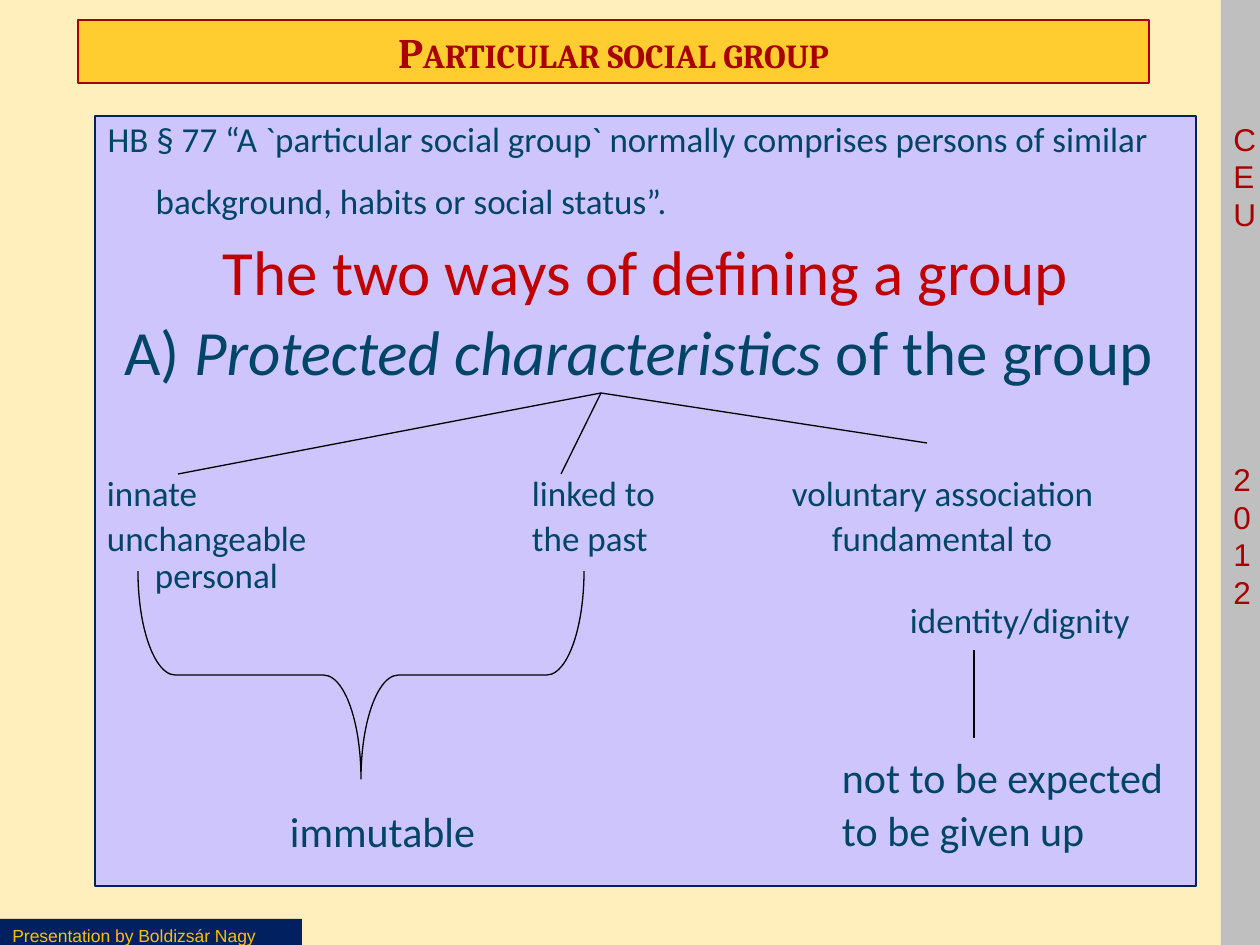
from dataclasses import dataclass
from typing import Any, NamedTuple, Optional

from lxml import etree
from pptx import Presentation
from pptx.dml.color import RGBColor
from pptx.enum.shapes import MSO_CONNECTOR, MSO_SHAPE
from pptx.enum.text import MSO_ANCHOR, MSO_AUTO_SIZE, PP_ALIGN
from pptx.oxml.ns import qn
from pptx.util import Emu, Pt

RECT, BRACE = MSO_SHAPE.RECTANGLE, MSO_SHAPE.LEFT_BRACE
STRAIGHT = MSO_CONNECTOR.STRAIGHT
LEFT, CENTER = PP_ALIGN.LEFT, PP_ALIGN.CENTER
TOP, MIDDLE = MSO_ANCHOR.TOP, MSO_ANCHOR.MIDDLE
NO_FIT = MSO_AUTO_SIZE.NONE
NO_MARGINS = dict.fromkeys(("margin_left", "margin_top", "margin_right", "margin_bottom"), 0)


@dataclass(frozen=True)
class Theme:
    page: str = "FFEFBD"
    band: str = "BFBFBF"
    navy: str = "002060"
    gold: str = "FFCD2F"
    amber: str = "FFC000"
    lilac: str = "CDC5FB"
    maroon: str = "A80000"
    red: str = "C00000"
    teal: str = "004568"
    ink: str = "000000"
    head: str = "Cambria"
    body: str = "Calibri"
    side: str = "Arial"
    footer: int = 10
    band_text: int = 18
    small: int = 20
    medium: int = 24
    large: int = 36
    hairline: float = 0.75


class Box(NamedTuple):
    x: int
    y: int
    w: int
    h: int


class Span(NamedTuple):
    text: str
    size: int
    color: str
    italic: bool = False


class Para(NamedTuple):
    spans: tuple[Span, ...]
    before: float = 0
    align: Any = LEFT
    margin: int = 0
    hang: int = 0


class Label(NamedTuple):
    box: Box
    paras: tuple[Para, ...]


class Line(NamedTuple):
    x1: int
    y1: int
    x2: int
    y2: int


T = Theme()
HANG = 48


def px(n: int) -> Emu:
    return Emu(n * 914400 // 126)


def rgb(code: str) -> RGBColor:
    return RGBColor.from_string(code)


def assign(obj: Any, values: dict[str, Any]) -> None:
    for name, value in values.items():
        setattr(obj, name, value)


def plain(text: str, before: float = 0, margin: int = 0, hang: int = 0,
          size: int = T.small) -> Para:
    return Para((Span(text, size, T.teal),), before, LEFT, margin, hang)


BODY = (
    Para((Span("HB § 77 “A `particular social group` normally comprises persons of similar "
               "background, habits or social status”.", T.small, T.teal),
          Span(" ", T.large, T.teal)), 0, LEFT, HANG, HANG),
    Para((Span("The two ways of defining a group", T.large, T.red),), 7.2, CENTER, HANG, HANG),
    Para((Span("A) ", T.large, T.teal),
          Span("Protected characteristics", T.large, T.teal, True),
          Span(" of the group ", T.large, T.teal)), 7.2, CENTER, HANG, HANG),
)

LABELS = (
    Label(Box(107, 476, 300, 122),
          (plain("innate"), plain("unchangeable\npersonal", 4, HANG, HANG))),
    Label(Box(532, 476, 200, 84), (plain("linked to"), plain("the past", 4))),
    Label(Box(792, 476, 391, 167),
          (plain("voluntary association"), plain("fundamental to", 4, 40),
           plain("identity/dignity", 25.7, 118))),
    Label(Box(290, 811, 260, 46), (plain("immutable", size=T.medium),)),
    Label(Box(842, 757, 341, 100),
          (plain("not to be expected", size=T.medium),
           plain("to be given up", 4.8, size=T.medium))),
)

LINES = (
    Line(601, 393, 178, 474),
    Line(601, 393, 561, 474),
    Line(601, 393, 927, 443),
    Line(974, 650, 974, 738),
)


def paint(sp: Any, fill: Optional[str], line: Optional[str]) -> None:
    if fill:
        sp.fill.solid()
        sp.fill.fore_color.rgb = rgb(fill)
    else:
        sp.fill.background()
    if line:
        sp.line.color.rgb = rgb(line)
        sp.line.width = Pt(T.hairline)
    else:
        sp.line.fill.background()


def place(sp: Any, box: Box) -> None:
    assign(sp, dict(zip(("left", "top", "width", "height"), map(px, box))))


def add_run(p: Any, text: str, size: int, color: str, font: str, **extra: Any) -> Any:
    r = p.add_run()
    r.text = text
    assign(r.font, {"size": Pt(size), "name": font, **extra})
    r.font.color.rgb = rgb(color)
    return r


def add_box(s: Any, shape: Any, box: Box, fill: Optional[str], line: Optional[str]) -> Any:
    sp = s.shapes.add_shape(shape, *map(px, box))
    sp.shadow.inherit = False
    paint(sp, fill, line)
    return sp


def add_line(s: Any, line: Line) -> None:
    c = s.shapes.add_connector(STRAIGHT, *map(px, line))
    c.line.color.rgb = rgb(T.ink)
    c.line.width = Pt(T.hairline)
    etree.SubElement(c._element.spPr, qn("a:effectLst"))


def write_paras(tf: Any, paras: tuple[Para, ...]) -> None:
    assign(tf, {"auto_size": NO_FIT, "vertical_anchor": TOP, "word_wrap": True})
    for n, para in enumerate(paras):
        p = tf.add_paragraph() if n else tf.paragraphs[0]
        assign(p, {"alignment": para.align, "line_spacing": 0.9,
                   "space_before": Pt(para.before)})
        pPr = p._p.get_or_add_pPr()
        pPr.set("marL", str(px(para.margin)))
        pPr.set("indent", str(-px(para.hang)))
        etree.SubElement(pPr, qn("a:buNone"))
        for span in para.spans:
            for i, text in enumerate(span.text.split("\n")):
                if i:
                    p.add_line_break()
                add_run(p, text, span.size, span.color, T.body, italic=span.italic)


def add_title(s: Any) -> None:
    sp = s.shapes.title
    place(sp, Box(78, 20, 1071, 63))
    paint(sp, T.gold, T.maroon)
    tf = sp.text_frame
    assign(tf, {"auto_size": NO_FIT, "vertical_anchor": MIDDLE, "word_wrap": True})
    p = tf.paragraphs[0]
    p.alignment = CENTER
    r = add_run(p, "Particular social group", T.medium, T.maroon, T.head, bold=True)
    r.font._element.set("cap", "small")


def add_body(s: Any) -> None:
    sp = s.placeholders[1]
    place(sp, Box(95, 116, 1101, 770))
    paint(sp, T.lilac, T.navy)
    write_paras(sp.text_frame, BODY)


def add_label(s: Any, label: Label) -> None:
    tf = s.shapes.add_textbox(*map(px, label.box)).text_frame
    assign(tf, NO_MARGINS)
    write_paras(tf, label.paras)


def add_side_band(s: Any) -> None:
    tf = add_box(s, RECT, Box(1221, 0, 39, 945), T.band, None).text_frame
    assign(tf, {"word_wrap": True, "vertical_anchor": TOP,
                "margin_top": px(120), "margin_right": 0})
    for i, text in enumerate(("CEU", "2012")):
        p = tf.add_paragraph() if i else tf.paragraphs[0]
        assign(p, {"alignment": LEFT, "line_spacing": Pt(21.5), "space_before": Pt(130 * i)})
        add_run(p, text, T.band_text, T.maroon, T.side)


def add_footer(s: Any) -> None:
    tf = add_box(s, RECT, Box(0, 919, 302, 26), T.navy, None).text_frame
    assign(tf, {"word_wrap": True, "vertical_anchor": TOP})
    p = tf.paragraphs[0]
    p.alignment = LEFT
    add_run(p, "Presentation by Boldizsár Nagy", T.footer, T.amber, T.side)


def main() -> None:
    prs = Presentation()
    assign(prs, {"slide_width": px(1260), "slide_height": px(945)})
    s = prs.slides.add_slide(prs.slide_layouts[1])
    s.background.fill.solid()
    s.background.fill.fore_color.rgb = rgb(T.page)
    add_title(s)
    add_body(s)
    add_side_band(s)
    add_footer(s)
    for label in LABELS:
        add_label(s, label)
    for line in LINES:
        add_line(s, line)
    brace = add_box(s, BRACE, Box(257, 452, 208, 446), None, T.ink)
    brace.rotation = 270
    brace.adjustments[0] = 0.18
    prs.save("out.pptx")


if __name__ == "__main__":
    main()
